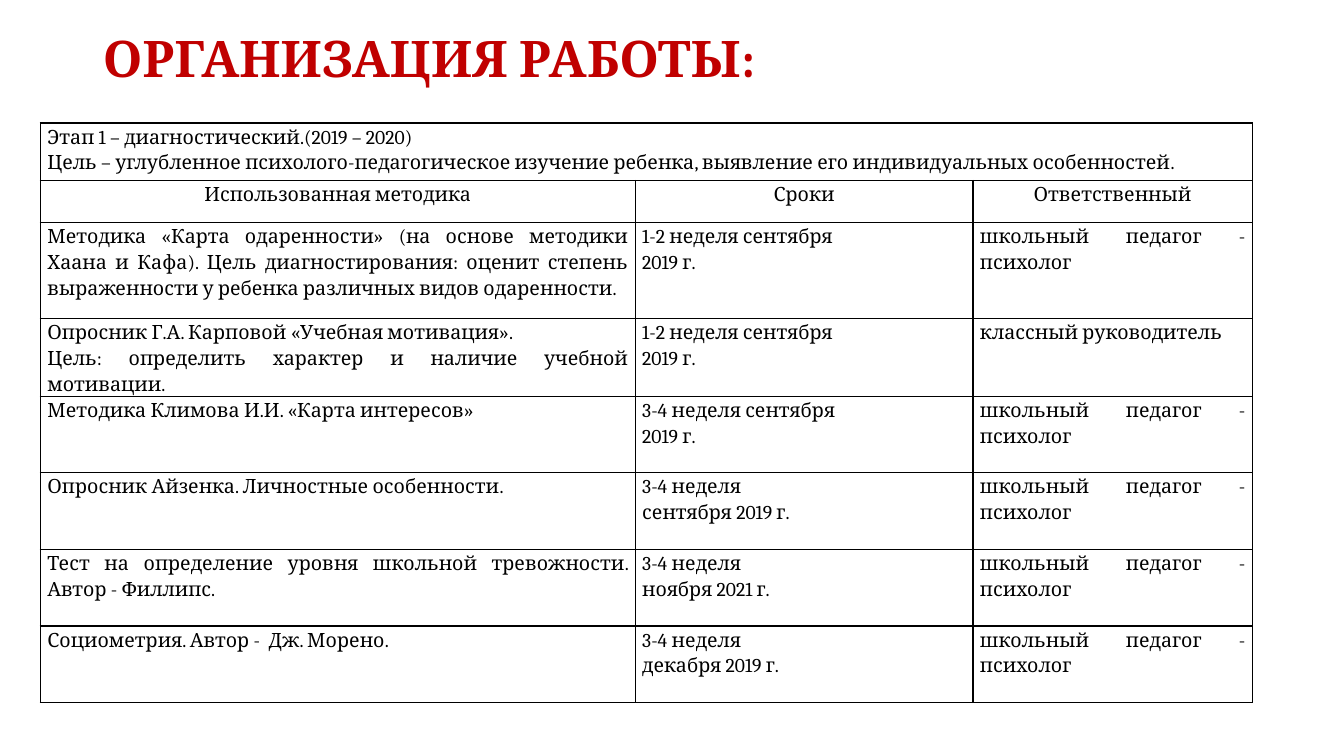
from lxml.etree import SubElement
from pptx import Presentation
from pptx.dml.color import RGBColor
from pptx.enum.text import MSO_ANCHOR, PP_ALIGN
from pptx.oxml.ns import qn
from pptx.util import Pt

PX = 9144  # EMU in one px, 100 px to the inch
RED = RGBColor(0xC0, 0x00, 0x00)
BLACK = RGBColor(0x00, 0x00, 0x00)
FONT = "Cambria"

TITLE_BOX = (92, 14, 1150, 93)
TABLE_BOX = (40, 122, 1202, 574)
COLUMN_WIDTHS = (590, 335, 277)
ROW_HEIGHTS = (57, 42, 95) + (76,) * 5

STAGE = (
    "Этап 1 – диагностический.(2019 – 2020)",
    "Цель – углубленное психолого-педагогическое изучение ребенка, "
    "выявление его индивидуальных особенностей.",
)
HEADINGS = ("Использованная методика", "Сроки", "Ответственный")
PSYCHOLOGIST = "школьный педагог - психолог"
# Each cell is a tuple of paragraphs: method, dates, person in charge
METHODS = (
    (("Методика «Карта одаренности» (на основе методики Хаана и Кафа). "
      "Цель диагностирования: оценит степень выраженности у ребенка "
      "различных видов одаренности.",),
     ("1-2 неделя сентября", "2019 г."), (PSYCHOLOGIST,)),
    (("Опросник Г.А. Карповой «Учебная мотивация».",
      "Цель: определить характер и наличие учебной мотивации."),
     ("1-2 неделя сентября", "2019 г."), ("классный руководитель",)),
    (("Методика Климова И.И. «Карта интересов»",),
     ("3-4 неделя сентября", "2019 г."), (PSYCHOLOGIST,)),
    (("Опросник Айзенка. Личностные особенности.",),
     ("3-4 неделя", "сентября 2019 г."), (PSYCHOLOGIST,)),
    (("Тест на определение уровня школьной тревожности. Автор - Филлипс.",),
     ("3-4 неделя", "ноября 2021 г."), (PSYCHOLOGIST,)),
    (("Социометрия. Автор -  Дж. Морено.",),
     ("3-4 неделя", "декабря 2019 г."), (PSYCHOLOGIST,)),
)


def write_paragraph(para, text, size, color, align, spacing, bold=False):
    para.alignment = align
    para.line_spacing = spacing
    span = para.add_run()
    span.text = text
    span.font.name = FONT
    span.font.size = Pt(size)
    span.font.bold = bold
    span.font.color.rgb = color


def add_title(page, box):
    title = page.shapes.title
    title.left, title.top, title.width, title.height = (n * PX for n in box)
    title.text_frame.vertical_anchor = MSO_ANCHOR.MIDDLE
    write_paragraph(title.text_frame.paragraphs[0], "ОРГАНИЗАЦИЯ РАБОТЫ:",
                    36, RED, PP_ALIGN.LEFT, 0.9, bold=True)


def format_cell(cell):
    cell.margin_left = cell.margin_right = 7 * PX
    cell.margin_top = cell.margin_bottom = 0
    properties = cell._tc.get_or_add_tcPr()
    for side in ("a:lnL", "a:lnR", "a:lnT", "a:lnB"):
        line = SubElement(properties, qn(side), w=str(Pt(1)))
        fill = SubElement(line, qn("a:solidFill"))
        SubElement(fill, qn("a:srgbClr"), val=str(BLACK))
    cell.fill.background()


def fill_cell(cell, texts, align=PP_ALIGN.JUSTIFY):
    frame = cell.text_frame
    for index, text in enumerate(texts):
        para = frame.add_paragraph() if index else frame.paragraphs[0]
        write_paragraph(para, text, 14, BLACK, align, 1.15)


def add_schedule(page, box):
    left, top, width, height = (n * PX for n in box)
    table = page.shapes.add_table(len(ROW_HEIGHTS), len(COLUMN_WIDTHS),
                                  left, top, width, height).table
    table.first_row = table.horz_banding = False
    for column, column_width in zip(table.columns, COLUMN_WIDTHS):
        column.width = column_width * PX
    for row, row_height in zip(table.rows, ROW_HEIGHTS):
        row.height = row_height * PX
    for cell in table.iter_cells():
        format_cell(cell)

    # Stage across the full width, then headings and methods
    table.cell(0, 0).merge(table.cell(0, len(COLUMN_WIDTHS) - 1))
    fill_cell(table.cell(0, 0), STAGE)
    for column, heading in enumerate(HEADINGS):
        fill_cell(table.cell(1, column), (heading,), PP_ALIGN.CENTER)
    for row, method in enumerate(METHODS, start=2):
        for column, texts in enumerate(method):
            fill_cell(table.cell(row, column), texts)


def main():
    deck = Presentation()
    deck.slide_width, deck.slide_height = 1333 * PX, 750 * PX
    page = deck.slides.add_slide(deck.slide_layouts.get_by_name("Title Only"))
    add_title(page, TITLE_BOX)
    add_schedule(page, TABLE_BOX)
    deck.save("out.pptx")


if __name__ == "__main__":
    main()
